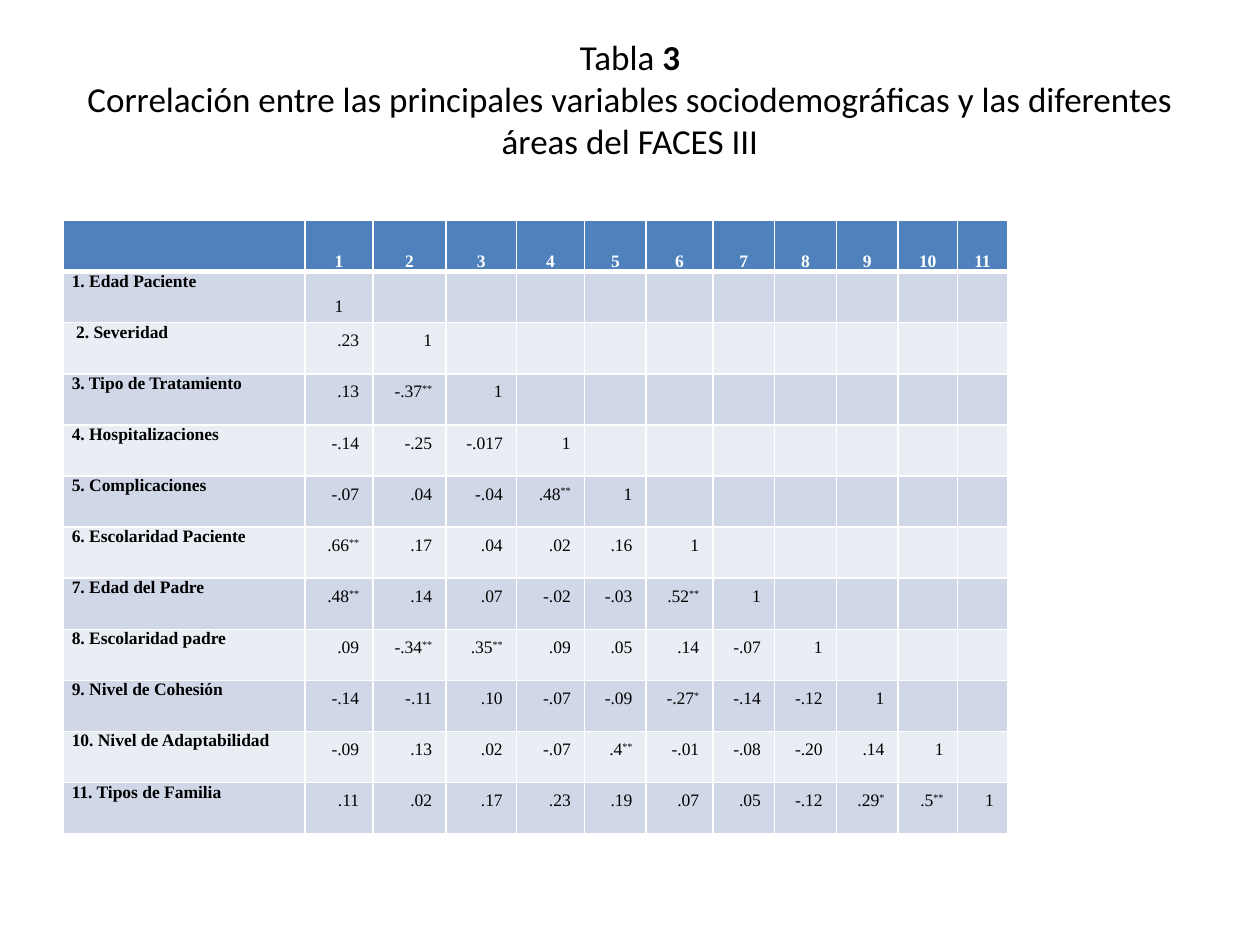
from lxml.etree import SubElement
from pptx import Presentation
from pptx.dml.color import RGBColor
from pptx.enum.text import MSO_ANCHOR as Anchor, MSO_AUTO_SIZE as Fit, PP_ALIGN as Align
from pptx.oxml.ns import qn
from pptx.util import Inches, Pt

BLACK = RGBColor(0x00, 0x00, 0x00)
WHITE = RGBColor(0xFF, 0xFF, 0xFF)
BLUE = RGBColor(0x4F, 0x81, 0xBD)
BANDS = [RGBColor(0xE9, 0xED, 0xF4), RGBColor(0xD0, 0xD8, 0xE8)]

# Variable names with the correlations left of the diagonal
DATA = [
    ("1. Edad Paciente", ""),
    (" 2. Severidad", ".23"),
    ("3. Tipo de Tratamiento", ".13 -.37**"),
    ("4. Hospitalizaciones", "-.14 -.25 -.017"),
    ("5. Complicaciones", "-.07 .04 -.04 .48**"),
    ("6. Escolaridad Paciente", ".66** .17 .04 .02 .16"),
    ("7. Edad del Padre", ".48** .14 .07 -.02 -.03 .52**"),
    ("8. Escolaridad padre", ".09 -.34** .35** .09 .05 .14 -.07"),
    ("9. Nivel de Cohesión", "-.14 -.11 .10 -.07 -.09 -.27* -.14 -.12"),
    ("10. Nivel de Adaptabilidad", "-.09 .13 .02 -.07 .4** -.01 -.08 -.20 .14"),
    ("11. Tipos de Familia", ".11 .02 .17 .23 .19 .07 .05 -.12 .29* .5**"),
]
COLS = [1.92, 0.54, 0.58, 0.56, 0.54, 0.49, 0.53, 0.49, 0.49, 0.49, 0.47, 0.4]


def edge(cell, **sides):
    """Draw white borders of the given widths; fill the cell afterwards."""
    props = cell._tc.get_or_add_tcPr()
    for side, width in sides.items():
        line = SubElement(props, qn(f"a:ln{side}"), w=str(Pt(width)))
        fill = SubElement(line, qn("a:solidFill"))
        SubElement(fill, qn("a:srgbClr"), val=str(WHITE))


def write(cell, text, color, bold, align):
    """Write a cell, raising any trailing asterisks."""
    para = cell.text_frame.paragraphs[0]
    para.alignment = align
    font = para.font
    font.name, font.size, font.bold = "Times New Roman", Pt(10), bold
    font.color.rgb = color
    base = text.rstrip("*")
    if base:
        para.add_run().text = base
    if base != text:
        stars = para.add_run()
        stars.text = text[len(base):]
        stars.font._element.set("baseline", "30000")
    return para


prs = Presentation()
prs.slide_width, prs.slide_height = Inches(10), Inches(7.5)
W, H = prs.slide_width, prs.slide_height
slide = prs.slides.add_slide(prs.slide_layouts[5])

# Title
title = slide.shapes.title
title.left, title.top = int(W * 0.05), int(H * 0.04)
title.width, title.height = int(W * 0.9), Inches(1.25)
frame = title.text_frame
frame.auto_size = Fit.NONE
frame.word_wrap = True
frame.vertical_anchor = Anchor.MIDDLE
frame.margin_top, frame.margin_bottom = 0, Inches(0.28)
lines = [
    [("Tabla ", False), ("3", True)],
    [("Correlación entre las principales variables sociodemográficas "
      "y las diferentes áreas del FACES III", False)],
]
for i, parts in enumerate(lines):
    para = frame.add_paragraph() if i else frame.paragraphs[0]
    para.alignment = Align.CENTER
    for text, bold in parts:
        run = para.add_run()
        run.text = text
        font = run.font
        font.name, font.size, font.bold = "Calibri", Pt(20), bold
        font.color.rgb = BLACK

# Table grid
count = len(COLS)
table = slide.shapes.add_table(count, count, int(W * 0.05), Inches(1.75),
                               Inches(sum(COLS)), Inches(4.87)).table
for col, width in zip(table.columns, COLS):
    col.width = Inches(width)

# Cells: header row, then names, values and the diagonal of ones
rows = [[""] + [str(n) for n in range(1, count)]]
rows += [[name] + values.split() + ["1"] for name, values in DATA]
for r, row in enumerate(rows):
    for c in range(count):
        cell = table.cell(r, c)
        text = row[c] if c < len(row) else ""
        cell.margin_left = cell.margin_right = Inches(0.07)
        cell.margin_top = cell.margin_bottom = 0
        edge(cell, L=1, R=1, T=3 if r == 1 else 1, B=1 if r else 3)
        cell.fill.solid()
        cell.fill.fore_color.rgb = BANDS[r % 2] if r else BLUE

        if r == 0:
            align = Align.CENTER
            cell.vertical_anchor = Anchor.BOTTOM
        elif c == 0:
            align = Align.LEFT
        elif r == 1:
            align = Align.CENTER
            cell.vertical_anchor = Anchor.MIDDLE
        else:
            align = Align.RIGHT
        para = write(cell, text, BLACK if r else WHITE, r == 0 or c == 0, align)

        if r and c == 0:
            para.space_after = Pt(10)
        elif r == 1:
            para.line_spacing = 2.0 if text else 1.0
        else:
            para.line_spacing = Pt(16)
            props = para._p.get_or_add_pPr()
            for side in ("marL", "marR"):
                props.set(side, str(Inches(0.04)))

prs.save("out.pptx")
